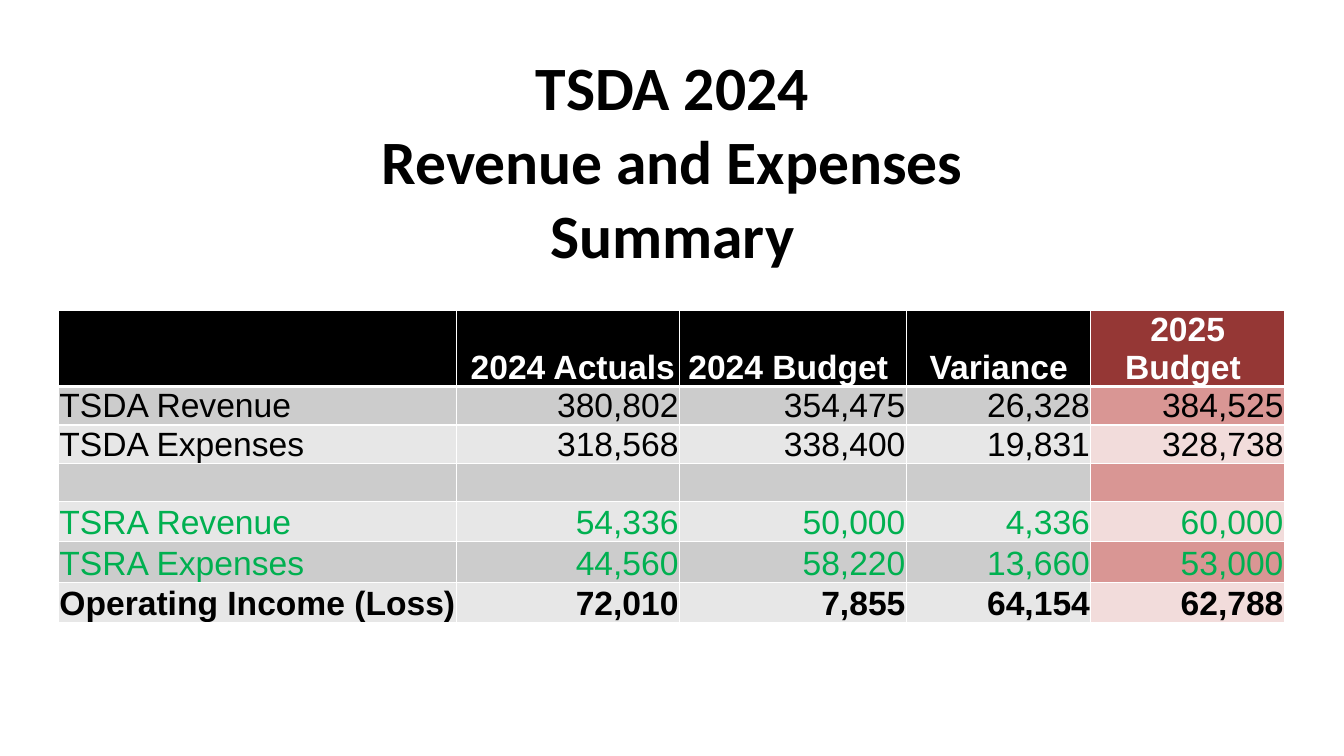
"""Build the TSDA 2024 revenue and expenses summary slide."""
from lxml import etree
from pptx import Presentation
from pptx.dml.color import RGBColor
from pptx.enum.text import MSO_ANCHOR, MSO_AUTO_SIZE, PP_ALIGN
from pptx.oxml.ns import qn
from pptx.util import Inches, Pt

LEFT, CENTER, RIGHT = PP_ALIGN.LEFT, PP_ALIGN.CENTER, PP_ALIGN.RIGHT
MIDDLE, BOTTOM = MSO_ANCHOR.MIDDLE, MSO_ANCHOR.BOTTOM
NO_AUTOFIT = MSO_AUTO_SIZE.NONE

BLACK, WHITE, GREEN = "000000", "FFFFFF", "00B050"
HEADER_FILLS = (BLACK, "953735")
BAND_FILLS = (("E7E7E7", "F2DCDB"), ("CCCCCC", "D99694"))

COLUMN_WIDTHS = (3.95, 2.21, 2.25, 1.83, 1.92)
ROW_HEIGHTS = (0.75, 0.38, 0.38, 0.38, 0.39, 0.41, 0.4)
SUMMARY = (
    ("", " 2024 Actuals", "2024 Budget ", "Variance", "2025 Budget "),
    ("TSDA Revenue", "380,802", "354,475", "26,328", "384,525"),
    ("TSDA Expenses", "318,568", "338,400", "19,831", "328,738"),
    ("", "", "", "", ""),
    ("TSRA Revenue", "54,336", "50,000", "4,336", "60,000"),
    ("TSRA Expenses", "44,560", "58,220", "13,660", "53,000"),
    ("Operating Income (Loss)", "72,010", "7,855", "64,154", "62,788"),
)


def rgb(color):
    return RGBColor.from_string(color)


def add_border(cell, side, points):
    line = etree.SubElement(cell._tc.get_or_add_tcPr(), qn(f"a:ln{side}"), w=str(Pt(points)))
    fill = etree.SubElement(line, qn("a:solidFill"))
    etree.SubElement(fill, qn("a:srgbClr"), val=WHITE)


prs = Presentation()
prs.slide_width, prs.slide_height = Inches(13.33), Inches(7.5)
slide = prs.slides.add_slide(prs.slide_layouts[5])

title = slide.shapes.title
title.left, title.top = Inches(2.17), Inches(0.42)
title.width, title.height = Inches(9), Inches(2.33)
title.text_frame.text = "TSDA 2024\vRevenue and Expenses\vSummary"
title.text_frame.auto_size = NO_AUTOFIT
title.text_frame.vertical_anchor = MIDDLE
heading = title.text_frame.paragraphs[0]
heading.alignment = CENTER
heading.font.name, heading.font.size, heading.font.bold = "Calibri", Pt(44), True
heading.font.color.rgb = rgb(BLACK)

table = slide.shapes.add_table(
    len(SUMMARY), len(COLUMN_WIDTHS), Inches(0.58), Inches(3.08),
    Inches(sum(COLUMN_WIDTHS)), Inches(sum(ROW_HEIGHTS))).table
for column, width in zip(table.columns, COLUMN_WIDTHS):
    column.width = Inches(width)
for row, height in zip(table.rows, ROW_HEIGHTS):
    row.height = Inches(height)

for r, entries in enumerate(SUMMARY):
    is_header, is_total = r == 0, r == len(SUMMARY) - 1
    fills = HEADER_FILLS if is_header else BAND_FILLS[r % 2]
    text_color = WHITE if is_header else GREEN if entries[0].startswith("TSRA") else BLACK
    for c, entry in enumerate(entries):
        cell = table.cell(r, c)
        cell.margin_left = cell.margin_right = cell.margin_top = Inches(0.01)
        cell.margin_bottom = 0
        cell.vertical_anchor = BOTTOM
        for side in "LRTB":
            under_header = (r, side) in ((0, "B"), (1, "T"))
            add_border(cell, side, 3 if under_header else 1)
        cell.fill.solid()
        cell.fill.fore_color.rgb = rgb(fills[c == len(entries) - 1])
        cell.text = entry
        figure = cell.text_frame.paragraphs[0]
        figure.alignment = CENTER if is_header else RIGHT if c else LEFT
        figure.font.name, figure.font.size = "Arial", Pt(24)
        figure.font.bold = is_header or is_total
        figure.font.color.rgb = rgb(text_color)

prs.save("out.pptx")
